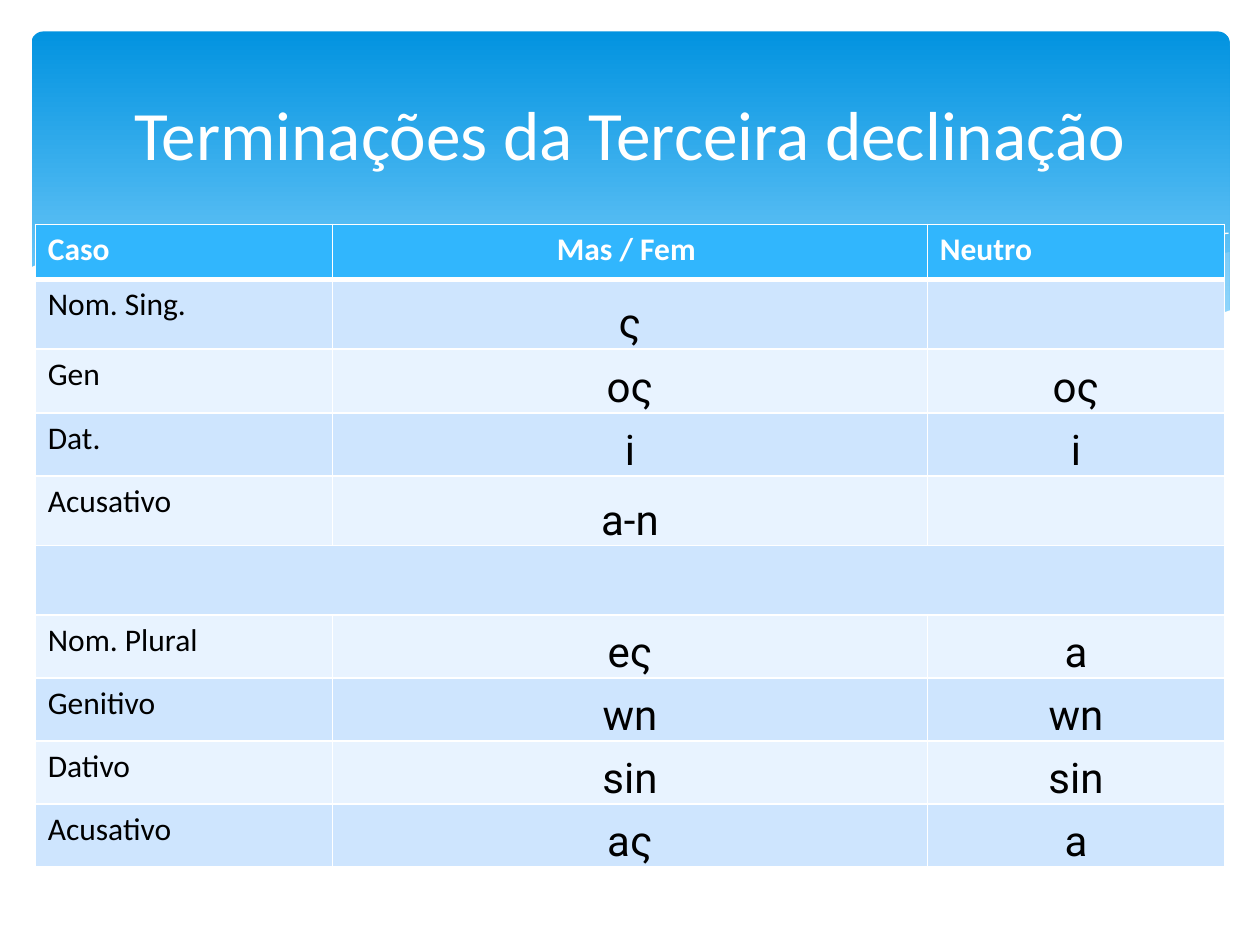
from lxml.etree import SubElement
from pptx import Presentation
from pptx.dml.color import RGBColor
from pptx.enum.shapes import MSO_SHAPE
from pptx.enum.text import MSO_ANCHOR, PP_ALIGN
from pptx.oxml.ns import qn
from pptx.util import Inches, Pt

COLORS = {
    "white": "FFFFFF", "black": "000000", "top": "0293E0", "foot": "83D3FE",
    "mist": "C6E7FC", "head": "31B6FD", "odd": "CEE5FE", "even": "E8F3FF",
}
ROWS = [
    ("Caso", "Mas / Fem ", "Neutro"),
    ("Nom. Sing.", "ς", ""),
    ("Gen", "oς", "oς"),
    ("Dat.", "i", "i"),
    ("Acusativo", "a-n", ""),
    ("", "", ""),
    ("Nom. Plural", "eς", "a"),
    ("Genitivo", "wn", "wn"),
    ("Dativo", "sin", "sin"),
    ("Acusativo", "aς", "a"),
]
GAP_ROW = 5
WIDTHS = [2.36, 4.72, 2.36]
HEIGHTS = [0.44, 0.55, 0.51, 0.5, 0.55, 0.55, 0.5, 0.5, 0.5, 0.5]

RIGHT_WAVE = [
    (9.76, 2), (9.35, 2.07), (8.91, 2.16), (8.32, 2.3), (7.53, 2.48), (6.61, 2.65),
    (7.05, 2.71), (7.57, 2.76), (8.14, 2.78), (8.63, 2.75), (9.05, 2.69),
    (9.42, 2.59), (9.76, 2.47),
]
MID_WAVE = [
    (8.93, 2.73), (8.37, 2.65), (7.75, 2.54), (7.06, 2.4), (6.29, 2.22),
    (5.69, 2.08), (5.14, 1.98), (4.65, 1.91), (4.2, 1.87), (3.61, 1.85),
    (3.13, 1.88), (2.86, 1.91), (3.42, 1.99), (4.04, 2.11), (4.91, 2.32),
    (5.66, 2.48), (6.34, 2.61), (6.95, 2.7), (7.48, 2.76), (8.07, 2.78),
    (8.57, 2.77),
]
LONG_LINE = [
    (3.09, 1.95), (3.44, 1.9), (4.01, 1.87), (4.69, 1.89), (5.33, 1.94),
    (6.08, 2.04), (6.95, 2.19), (7.95, 2.41), (9.07, 2.72),
]
SHORT_LINE = [
    (6.13, 2.57), (6.95, 2.35), (7.76, 2.16), (8.66, 1.99), (9.24, 1.9), (9.75, 1.85),
]
WHITE_WAVE = [
    (9.77, 2.46), (9.4, 2.59), (8.99, 2.69), (8.5, 2.75), (8.09, 2.77),
    (7.44, 2.74), (6.68, 2.65), (5.79, 2.5), (5.03, 2.33), (4.18, 2.13),
    (3.4, 1.97), (2.71, 1.88), (2.11, 1.84), (1.61, 1.84), (1.19, 1.87),
    (0.76, 1.95), (0.4, 2.05), (0.23, 2.13), (0.23, 3.29), (9.77, 3.29),
]


def rgb(name):
    return RGBColor.from_string(COLORS[name])


def style(run, size, face, color, bold=False):
    font = run.font
    font.size, font.name, font.bold = Pt(size), face, bold
    font.color.rgb = rgb(color)


def add_band(shapes):
    band = shapes.add_shape(MSO_SHAPE.ROUNDED_RECTANGLE, Inches(0.25), Inches(0.25),
                            Inches(9.51), Inches(2.7))
    band.adjustments[0] = 0.034
    band.shadow.inherit = False
    band.line.fill.background()
    band.fill.gradient()
    band.fill.gradient_angle = 270
    for stop, name, place in zip(band.fill.gradient_stops, ("top", "foot"), (0, 0.9)):
        stop.color.rgb = rgb(name)
        stop.position = place


def add_path(shapes, points, closed):
    points = [(Inches(x), Inches(y)) for x, y in points]
    pen = shapes.build_freeform(*points[0])
    pen.add_line_segments(points[1:], close=closed)
    shape = pen.convert_to_shape()
    shape.shadow.inherit = False
    return shape


def add_wave(shapes, points, color, alpha=100):
    wave = add_path(shapes, points, True)
    wave.line.fill.background()
    wave.fill.solid()
    wave.fill.fore_color.rgb = rgb(color)
    if alpha < 100:
        tint = next(wave.element.spPr.iter(qn("a:srgbClr")))
        SubElement(tint, qn("a:alpha"), val=str(alpha * 1000))


def add_curve(shapes, points):
    curve = add_path(shapes, points, False)
    curve.fill.background()
    curve.line.color.rgb = rgb("white")
    curve.line.width = Pt(0)


def set_edges(cell, row):
    props = cell._tc.get_or_add_tcPr()
    for side in "LRTB":
        thick = (row, side) in ((0, "B"), (1, "T"))
        edge = SubElement(props, qn("a:ln" + side), w=str(Pt(3 if thick else 1)))
        fill = SubElement(edge, qn("a:solidFill"))
        SubElement(fill, qn("a:srgbClr"), val=COLORS["white"])


def fill_cell(cell, row, col, text):
    set_edges(cell, row)
    cell.fill.solid()
    cell.fill.fore_color.rgb = rgb("head" if row == 0 else "odd" if row % 2 else "even")
    if not text:
        return
    cell.text_frame.text = text
    para = cell.text_frame.paragraphs[0]
    ending = row > 0 and col > 0
    para.alignment = PP_ALIGN.CENTER if ending or col == 1 else PP_ALIGN.LEFT
    if ending:
        cell.vertical_anchor = MSO_ANCHOR.BOTTOM
        cell.margin_left = cell.margin_right = cell.margin_top = Inches(0.01)
        cell.margin_bottom = 0
        style(para.runs[0], 24, "Roboto", "black")
    else:
        style(para.runs[0], 18, "Calibri", "black" if row else "white", row == 0)


def add_endings(shapes):
    frame = shapes.add_table(len(ROWS), len(WIDTHS), Inches(0.28), Inches(1.78),
                             Inches(sum(WIDTHS)), Inches(sum(HEIGHTS)))
    table = frame.table
    table.first_row = table.horz_banding = False
    for column, width in zip(table.columns, WIDTHS):
        column.width = Inches(width)
    for line, height in zip(table.rows, HEIGHTS):
        line.height = Inches(height)
    for row, texts in enumerate(ROWS):
        for col, text in enumerate(texts):
            fill_cell(table.cell(row, col), row, col, text)
    table.cell(GAP_ROW, 0).merge(table.cell(GAP_ROW, len(WIDTHS) - 1))


def set_title(shapes):
    """Fill the title and bring it in front of the band."""
    title = shapes.title
    title.left, title.top = Inches(0.5), Inches(0.37)
    title.width, title.height = Inches(9), Inches(1.37)
    title.text_frame.text = "Terminações da Terceira declinação"
    title.text_frame.vertical_anchor = MSO_ANCHOR.MIDDLE
    para = title.text_frame.paragraphs[0]
    para.alignment = PP_ALIGN.CENTER
    style(para.runs[0], 39.6, "Calibri", "white")
    shapes.element.append(title.element)


def main():
    deck = Presentation()
    deck.slide_width, deck.slide_height = Inches(10), Inches(7.5)
    shapes = deck.slides.add_slide(deck.slide_layouts[5]).shapes
    add_band(shapes)
    add_wave(shapes, RIGHT_WAVE, "mist", 29)
    add_wave(shapes, MID_WAVE, "mist", 40)
    add_curve(shapes, LONG_LINE)
    add_curve(shapes, SHORT_LINE)
    add_wave(shapes, WHITE_WAVE, "white")
    add_endings(shapes)
    set_title(shapes)
    deck.save("out.pptx")


if __name__ == "__main__":
    main()
